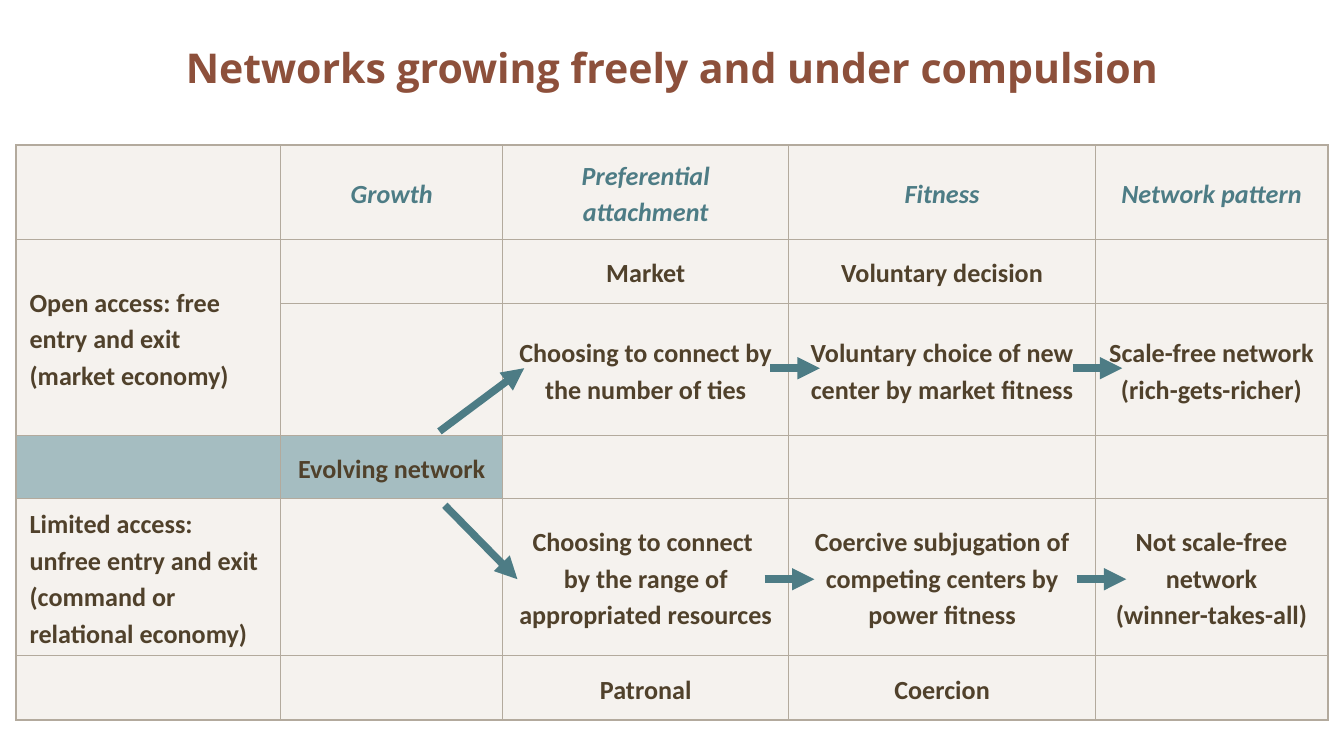
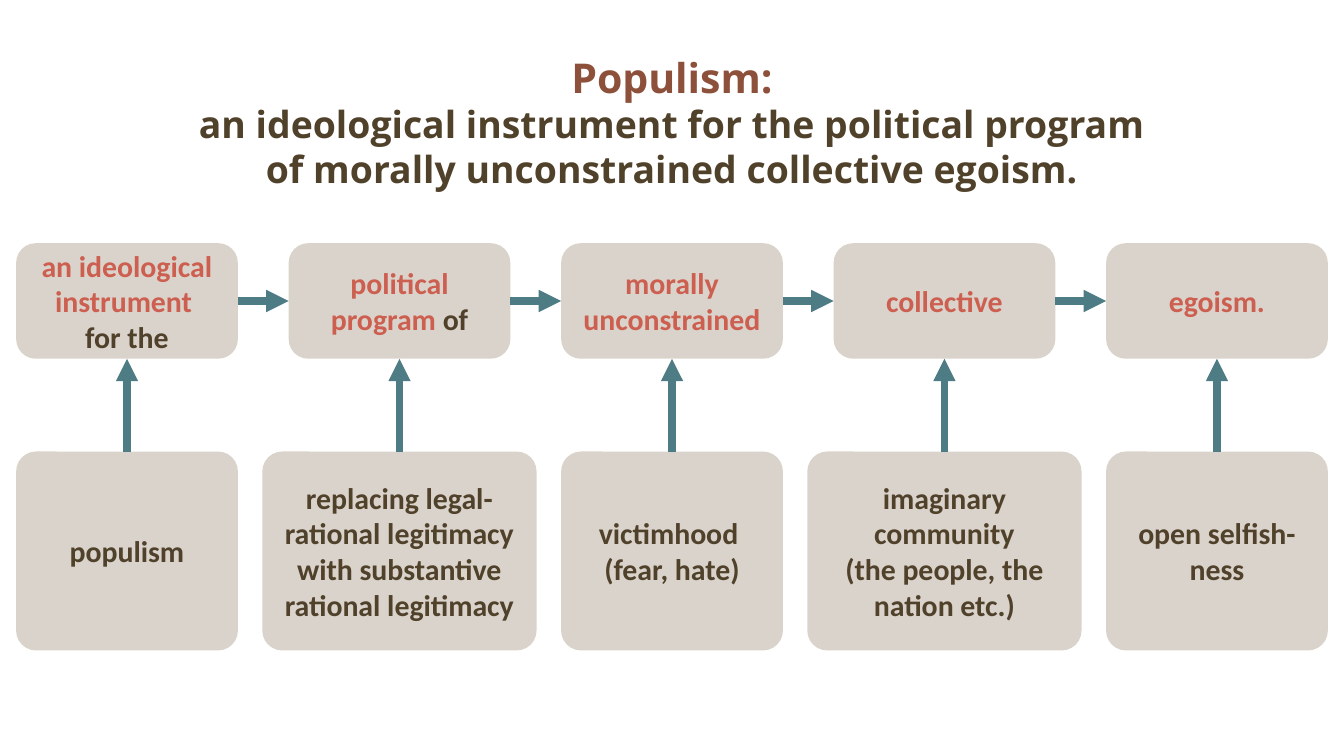
from lxml.etree import SubElement
from pptx import Presentation
from pptx.dml.color import RGBColor
from pptx.enum.shapes import MSO_CONNECTOR, MSO_SHAPE
from pptx.enum.text import MSO_ANCHOR, MSO_AUTO_SIZE, PP_ALIGN
from pptx.oxml import parse_xml
from pptx.oxml.ns import nsdecls, qn
from pptx.util import Inches, Pt

# Shared look
BROWN, DARK, TEAL, RED = "8D503B", "50412B", "4D7C85", "CD5F50"
CELL, BOX, BORDER = "EFEAE4", "D1C9BE", "B3AA9D"
MARGIN, FULL_W = 0.12, 9.76

TITLE_FONT = {"name": "Open Sans", "size": Pt(22), "bold": True}
SUBTITLE_FONT = {**TITLE_FONT, "size": Pt(20)}
CELL_FONT = {"name": "Calibri", "size": Pt(14), "bold": True, "italic": False}
HEAD_FONT = {**CELL_FONT, "italic": True}
BOX_FONT = {"name": "Calibri", "size": Pt(16), "bold": True}

# Slide 1 content
TABLE_TITLE = [[("Networks growing freely and under compulsion", BROWN, TITLE_FONT)]]
COLS = [1.97, 1.65, 2.13, 2.28, 1.73]
ROWS = [0.7, 0.48, 0.98, 0.47, 0.99, 0.48]
TABLE_TOP = 1.08
CELLS = [
    ["", "Growth", "Preferential attachment", "Fitness", "Network pattern"],
    ["Open access: free entry and exit\n(market economy)", "", "Market",
     "Voluntary decision", ""],
    ["", "", "Choosing to connect by the number of ties",
     "Voluntary choice of new center by market fitness",
     "Scale-free network\n(rich-gets-richer)"],
    ["", "Evolving network", "", "", ""],
    ["Limited access: unfree entry and exit\n(command or relational economy)", "",
     "Choosing to connect \nby the range of appropriated resources",
     "Coercive subjugation of competing centers by power fitness",
     "Not scale-free network\n(winner-takes-all)"],
    ["", "", "Patronal", "Coercion", ""],
]
HIGHLIGHT = [(3, 0), (3, 1)]
TIGHT_ROWS = (2, 4)
OPEN_Y, LIMITED_Y, STEP = 2.74, 4.31, 0.37
BRANCHES = [(3.27, 3.21, 3.9, OPEN_Y), (3.31, 3.76, 3.85, LIMITED_Y)]
STEPS = [(5.73, OPEN_Y), (5.69, LIMITED_Y), (7.98, OPEN_Y), (8.01, LIMITED_Y)]

# Slide 2 content: lines of a title, then paragraphs of (text, colour) runs
POPULISM_TITLE = [
    [("Populism:", BROWN, TITLE_FONT)],
    [("an ideological instrument for the political program", DARK, SUBTITLE_FONT)],
    [("of morally unconstrained collective egoism.", DARK, SUBTITLE_FONT)],
]
PHRASES = [
    [[("an ideological instrument ", RED)], [("for the", DARK)]],
    [[("political program ", RED), ("of", DARK)]],
    [[("morally unconstrained", RED)]],
    [[("collective", RED)]],
    [[("egoism.", RED)]],
]
MEANINGS = [
    "populism",
    "replacing legal-rational legitimacy with substantive rational legitimacy",
    "victimhood \n(fear, hate)",
    "imaginary community\n(the people, the nation etc.)",
    "open selfish-ness",
]
BOX_W, WIDE_W, WIDE = 1.65, 2.04, (1, 3)
PHRASE_Y, PHRASE_H, PHRASE_ADJ = 1.81, 0.86, 0.17
MEANING_Y, MEANING_H, MEANING_ADJ = 3.36, 1.48, 0.1


def rgb(value):
    return RGBColor.from_string(value)


def fill(target, color, percent):
    """Solid fill with the given opacity."""
    target.fill.solid()
    target.fill.fore_color.rgb = rgb(color)
    clr = target.fill._xPr.find(f"{qn('a:solidFill')}/{qn('a:srgbClr')}")
    SubElement(clr, qn("a:alpha"), val=str(percent * 1000))


def add_run(p, text, color, font):
    r = p.add_run()
    r.text = text
    for key, value in font.items():
        setattr(r.font, key, value)
    r.font.color.rgb = rgb(color)


def write(tf, paragraphs, font, align=PP_ALIGN.CENTER, spacing=1.0):
    for i, runs in enumerate(paragraphs):
        p = tf.add_paragraph() if i else tf.paragraphs[0]
        p.alignment, p.line_spacing = align, spacing
        for text, color in runs:
            add_run(p, text, color, font)


def plain(text, color):
    return [[(line, color)] for line in text.split("\n")]


def titled_slide(prs, lines, height):
    s = prs.slides.add_slide(prs.slide_layouts[5])
    sp = s.shapes.title
    sp.left, sp.top = Inches(MARGIN), 0
    sp.width, sp.height = Inches(FULL_W), Inches(height)
    tf = sp.text_frame
    tf.auto_size, tf.word_wrap = MSO_AUTO_SIZE.NONE, True
    tf.vertical_anchor = MSO_ANCHOR.MIDDLE
    p = tf.paragraphs[0]
    p.alignment, p.line_spacing = PP_ALIGN.CENTER, 1.0
    for i, runs in enumerate(lines):
        if i:
            p.add_line_break()
        for run in runs:
            add_run(p, *run)
    return s


def arrow(s, x1=0, y1=0, x2=0, y2=0):
    c = s.shapes.add_connector(MSO_CONNECTOR.STRAIGHT, *map(Inches, (x1, y1, x2, y2)))
    c.line.color.rgb = rgb(TEAL)
    c.line.width = Pt(4)
    SubElement(c.line._get_or_add_ln(), qn("a:tailEnd"), type="triangle")
    SubElement(c._element.spPr, qn("a:effectLst"))
    return c


def join(s, start, start_side, end, end_side):
    c = arrow(s)
    c.begin_connect(start, start_side)
    c.end_connect(end, end_side)


def borders(cell, row, col):
    """Thin inner lines, thicker lines on the table's outer edge."""
    outer = {"L": col == 0, "R": col == len(COLS) - 1,
             "T": row == 0, "B": row == len(ROWS) - 1}
    tcPr = cell._tc.get_or_add_tcPr()
    for i, (side, edge) in enumerate(outer.items()):
        tcPr.insert(i, parse_xml(
            f'<a:ln{side} {nsdecls("a")} w="{Pt(1 if edge else 0.5)}"><a:solidFill>'
            f'<a:srgbClr val="{BORDER}"/></a:solidFill></a:ln{side}>'))


def network_slide(prs):
    s = titled_slide(prs, TABLE_TITLE, 1)
    # Table
    table = s.shapes.add_table(len(ROWS), len(COLS), Inches(MARGIN), Inches(TABLE_TOP),
                               Inches(FULL_W), Inches(sum(ROWS))).table
    table.first_row = table.horz_banding = False
    for column, width in zip(table.columns, COLS):
        column.width = Inches(width)
    for row, height in zip(table.rows, ROWS):
        row.height = Inches(height)
    table.cell(1, 0).merge(table.cell(2, 0))
    for row, texts in enumerate(CELLS):
        for col, text in enumerate(texts):
            cell = table.cell(row, col)
            tight = row in TIGHT_ROWS and col > 1
            cell.vertical_anchor = MSO_ANCHOR.MIDDLE
            cell.margin_left = cell.margin_right = Inches(0.05 if tight else 0.1)
            cell.margin_top = cell.margin_bottom = Inches(0.05 if tight else 0.04)
            fill(cell, *((TEAL, 50) if (row, col) in HIGHLIGHT else (CELL, 60)))
            borders(cell, row, col)
            if text:
                write(cell.text_frame, plain(text, DARK if row else TEAL),
                      CELL_FONT if row else HEAD_FONT,
                      PP_ALIGN.CENTER if col else PP_ALIGN.LEFT, 1.15)
    # Arrows
    for branch in BRANCHES:
        arrow(s, *branch)
    for x, y in STEPS:
        arrow(s, x, y, x + STEP, y)


def add_box(s, center, y, width, height, adj, paragraphs):
    sp = s.shapes.add_shape(MSO_SHAPE.ROUNDED_RECTANGLE, Inches(center - width / 2),
                            Inches(y), Inches(width), Inches(height))
    sp.adjustments[0] = adj
    sp.shadow.inherit = False
    sp.line.fill.background()
    fill(sp, BOX, 80)
    tf = sp.text_frame
    tf.word_wrap, tf.vertical_anchor = True, MSO_ANCHOR.MIDDLE
    write(tf, paragraphs, BOX_FONT)
    return sp


def populism_slide(prs):
    s = titled_slide(prs, POPULISM_TITLE, PHRASE_Y)
    pitch = (FULL_W - BOX_W) / (len(PHRASES) - 1)
    centers = [MARGIN + BOX_W / 2 + i * pitch for i in range(len(PHRASES))]
    # Two rows of boxes
    phrases = [add_box(s, x, PHRASE_Y, BOX_W, PHRASE_H, PHRASE_ADJ, paragraphs)
               for x, paragraphs in zip(centers, PHRASES)]
    meanings = [add_box(s, x, MEANING_Y, WIDE_W if i in WIDE else BOX_W, MEANING_H,
                        MEANING_ADJ, plain(text, DARK))
                for i, (x, text) in enumerate(zip(centers, MEANINGS))]
    # Arrows up, then arrows along the phrase
    for meaning, phrase in zip(meanings, phrases):
        join(s, meaning, 0, phrase, 2)
    for left, right in zip(phrases, phrases[1:]):
        join(s, left, 3, right, 1)


def main():
    prs = Presentation()
    prs.slide_width = Inches(10)
    prs.slide_height = prs.slide_width * 9 // 16
    network_slide(prs)
    populism_slide(prs)
    prs.save("out.pptx")


if __name__ == "__main__":
    main()
